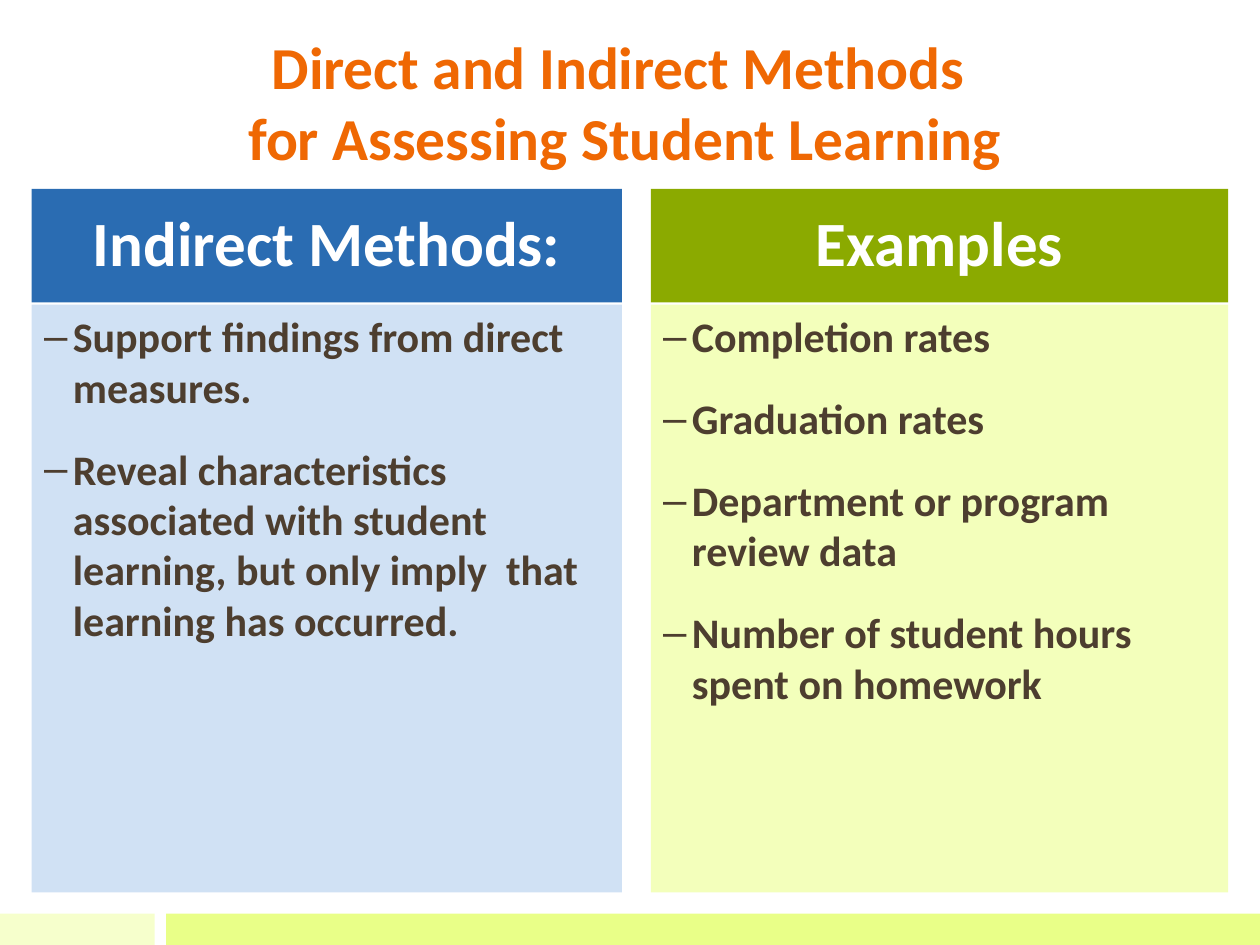
from lxml.etree import SubElement
from pptx import Presentation
from pptx.dml.color import RGBColor
from pptx.enum.shapes import MSO_SHAPE
from pptx.enum.text import MSO_ANCHOR, PP_ALIGN
from pptx.oxml.ns import qn
from pptx.util import Cm, Pt

COLORS = {
    "title": "EF6803",
    "white": "FFFFFF",
    "body": "4D3E2F",
    "blue": "2A6CB2",
    "pale_blue": "D0E1F4",
    "green": "8BAA00",
    "pale_green": "F3FFBB",
    "footer_pale": "F6FFCC",
    "footer_bright": "E9FF88",
}


def add_block(page, left, top, width, height, fill):
    box = page.shapes.add_shape(
        MSO_SHAPE.RECTANGLE, Cm(left), Cm(top), Cm(width), Cm(height))
    box.shadow.inherit = False
    box.line.fill.background()
    if fill:
        box.fill.solid()
        box.fill.fore_color.rgb = RGBColor.from_string(COLORS[fill])
    else:
        box.fill.background()
    return box


def write_text(box, lines, size, color, anchor=MSO_ANCHOR.MIDDLE,
               align=PP_ALIGN.CENTER, spacing=None, after=0, bullet=None):
    frame = box.text_frame
    frame.word_wrap = True
    frame.vertical_anchor = anchor
    for index, line in enumerate(lines):
        para = frame.add_paragraph() if index else frame.paragraphs[0]
        para.text = line
        para.alignment = align
        para.line_spacing = spacing
        para.space_after = Pt(after)
        for span in para.runs:
            span.font.name = "Calibri"
            span.font.size = Pt(size)
            span.font.bold = True
            span.font.color.rgb = RGBColor.from_string(COLORS[color])
        if bullet:
            properties = para._p.get_or_add_pPr()
            properties.set("marL", str(Cm(0.58)))
            properties.set("indent", str(-Cm(0.58)))
            SubElement(properties, qn("a:buFont"), typeface="Arial")
            SubElement(properties, qn("a:buChar"), char=bullet)


deck = Presentation()
deck.slide_width = Cm(25.4)
deck.slide_height = Cm(19.05)
page = deck.slides.add_slide(deck.slide_layouts[6])

for left, width, fill in [(0, 3.12, "footer_pale"), (3.35, 22.05, "footer_bright")]:
    add_block(page, left, 18.42, width, 0.63, fill)

title = add_block(page, 0.43, 0.43, 24.33, 3.18, None)
write_text(title, ["Direct and Indirect Methods \vfor Assessing Student Learning"],
           size=34, color="title", anchor=MSO_ANCHOR.BOTTOM)

columns = [
    (0.64, 11.9, "Indirect Methods:", "blue", "pale_blue", [
        "Support findings from direct measures.",
        "Reveal characteristics associated with student learning, "
        "but only imply  that learning has occurred.",
    ]),
    (13.12, 11.64, "Examples", "green", "pale_green", [
        "Completion rates",
        "Graduation rates",
        "Department or program review data",
        "Number of student hours spent on homework",
    ]),
]
for left, width, heading, heading_fill, body_fill, points in columns:
    header = add_block(page, left, 3.81, width, 2.29, heading_fill)
    write_text(header, [heading], size=36, color="white", spacing=0.9)
    body = add_block(page, left, 6.14, width, 11.85, body_fill)
    write_text(body, points, size=24, color="body", anchor=MSO_ANCHOR.TOP,
               align=PP_ALIGN.LEFT, after=18, bullet="–")

deck.save("out.pptx")
